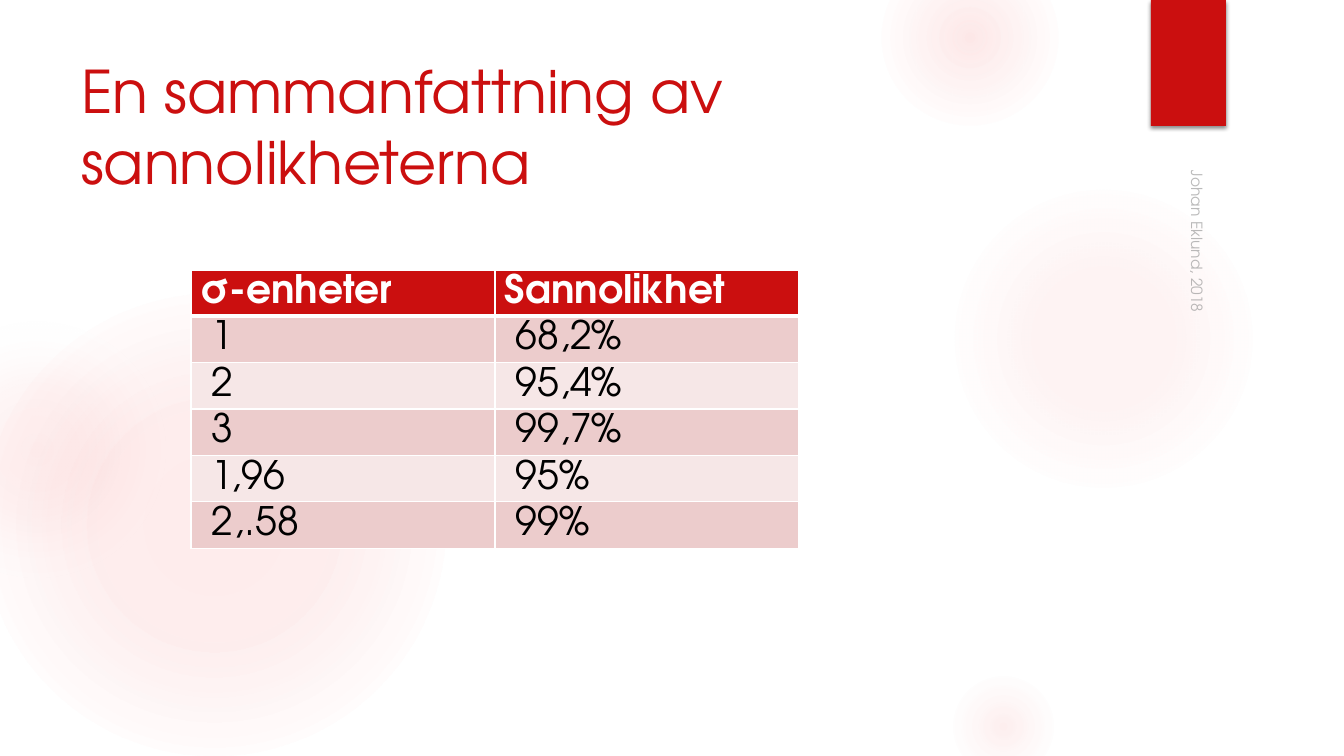
"""Builds a slide that sums up normal distribution probabilities in a table."""
from lxml import etree
from pptx import Presentation
from pptx.dml.color import RGBColor
from pptx.enum import shapes, text
from pptx.oxml import ns
from pptx.util import Pt

TITLE = "En sammanfattning av sannolikheterna"
CREDIT = "Johan Eklund, 2018"
ROWS = [
    ("σ-enheter", "Sannolikhet"),
    ("1", "68,2%"),
    ("2", "95,4%"),
    ("3", "99,7%"),
    ("1,96", "95%"),
    ("2,.58", "99%"),
]
COLORS = {
    "red": "CB0F0F", "glow": "F35C5C", "mist": "F3F3F3", "gray": "8C8C8C",
    "dark": "ECCCCC", "light": "F6E7E7", "white": "FFFFFF", "black": "000000",
}
GLOWS = [
    (-17, 294, 462, [(0, "glow", 11), (36, "glow", 10), (75, "glow", 0)]),
    (-93, 320, 260, [(0, "glow", 8), (36, "glow", 5), (71, "mist", 0)]),
    (949, 184, 310, [(0, "glow", 7), (36, "glow", 6), (69, "glow", 0)]),
    (882, -50, 176, [(0, "glow", 14), (36, "glow", 7), (73, "glow", 0)]),
    (949, 672, 109, [(0, "glow", 10), (31, "glow", 5), (66, "glow", 0)]),
]
FONT = "TeX Gyre Adventor"
SCALE = 914400 / 100.8
COL, ROW = 304, 46


def px(*nums):
    return [round(n * SCALE) for n in nums]


def rgb(name):
    return RGBColor.from_string(COLORS[name])


def add(node, tag, **attrs):
    return etree.SubElement(node, ns.qn(tag), {k: str(v) for k, v in attrs.items()})


def tint(node, name, alpha=100):
    color = add(node, "a:srgbClr", val=COLORS[name])
    if alpha < 100:
        add(color, "a:alpha", val=alpha * 1000)


def style(para, size, name, bold=False):
    font = para.font
    font.name, font.size, font.bold = FONT, Pt(size), bold
    font.color.rgb = rgb(name)


def add_glow(slide, left, top, size, stops):
    oval = slide.shapes.add_shape(shapes.MSO_SHAPE.OVAL, *px(left, top, size, size))
    oval.shadow.inherit = False
    oval.line.fill.background()
    grad = etree.Element(ns.qn("a:gradFill"), rotWithShape="1")
    items = add(grad, "a:gsLst")
    for pos, name, alpha in stops:
        tint(add(items, "a:gs", pos=pos * 1000), name, alpha)
    way = add(grad, "a:path", path="circle")
    add(way, "a:fillToRect", l=50000, t=50000, r=50000, b=50000)
    oval.element.spPr.find(ns.qn("a:prstGeom")).addnext(grad)


def add_tab(slide):
    tab = slide.shapes.add_shape(shapes.MSO_SHAPE.RECTANGLE, *px(1151, 0, 75, 126))
    tab.fill.solid()
    tab.fill.fore_color.rgb = rgb("red")
    tab.line.fill.background()
    tab.shadow.inherit = False
    effect = tab.element.spPr.find(ns.qn("a:effectLst"))
    shade = add(effect, "a:outerShdw", blurRad=Pt(3), dist=Pt(2), dir=5400000)
    tint(shade, "black", 45)


def add_title(slide):
    title = slide.shapes.title
    title.left, title.top, title.width, title.height = px(71, 50, 1037, 154)
    frame = title.text_frame
    frame.text, frame.word_wrap = TITLE, True
    frame.auto_size = text.MSO_AUTO_SIZE.NONE
    frame.vertical_anchor = text.MSO_ANCHOR.TOP
    para = frame.paragraphs[0]
    para.alignment = text.PP_ALIGN.LEFT
    style(para, 42, "red")


def add_borders(cell, head):
    props = cell._tc.get_or_add_tcPr()
    for side in "LRTB":
        width = 3 if head and side == "B" else 1
        line = add(props, "a:ln" + side, w=Pt(width))
        tint(add(line, "a:solidFill"), "white")


def add_grid(slide):
    count = len(ROWS)
    grid = slide.shapes.add_table(count, 2, *px(191, 270, 2 * COL, count * ROW)).table
    for r, row in enumerate(ROWS):
        head = r == 0
        fill = "red" if head else ("light", "dark")[r % 2]
        for c, words in enumerate(row):
            cell = grid.cell(r, c)
            cell.text = words
            cell.margin_left, cell.margin_top, cell.margin_bottom = px(10 if head else 21, 5, 5)
            add_borders(cell, head)
            cell.fill.solid()
            cell.fill.fore_color.rgb = rgb(fill)
            style(cell.text_frame.paragraphs[0], 28, "white" if head else "black", head)


def add_credit(slide):
    box = slide.shapes.add_textbox(*px(987, 356, 425, 33))
    box.rotation = 90
    frame = box.text_frame
    frame.word_wrap = True
    frame.vertical_anchor = text.MSO_ANCHOR.BOTTOM
    frame.text = CREDIT
    para = frame.paragraphs[0]
    style(para, 11, "gray")
    color = next(para._p.iter(ns.qn("a:srgbClr")))
    add(color, "a:alpha", val=60000)


def main():
    deck = Presentation()
    deck.slide_width, deck.slide_height = px(1344, 756)
    slide = deck.slides.add_slide(deck.slide_layouts[5])
    for glow in GLOWS:
        add_glow(slide, *glow)
    add_tab(slide)
    add_title(slide)
    add_grid(slide)
    add_credit(slide)
    deck.save("out.pptx")


if __name__ == "__main__":
    main()
